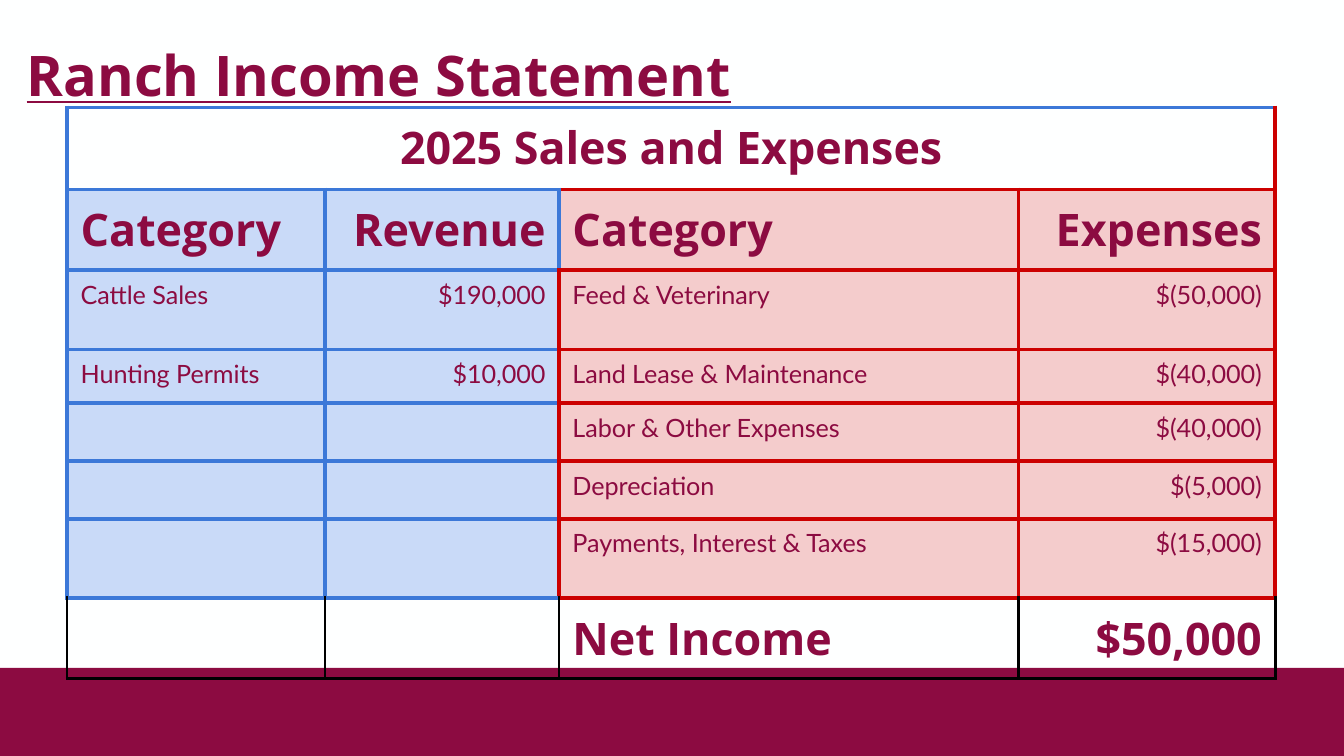
from lxml import etree
from pptx import Presentation
from pptx.dml.color import RGBColor
from pptx.enum.shapes import MSO_SHAPE
from pptx.enum.text import PP_ALIGN
from pptx.oxml import parse_xml
from pptx.oxml.ns import nsdecls, qn
from pptx.util import Inches, Pt

MAROON = RGBColor(0x8C, 0x0B, 0x41)
PAPER = RGBColor(0xFE, 0xFF, 0xFF)
BLUE = RGBColor(0x3C, 0x78, 0xD8)
PALE_BLUE = RGBColor(0xC9, 0xDA, 0xF8)
RED = RGBColor(0xCC, 0x00, 0x00)
PALE_RED = RGBColor(0xF4, 0xCC, 0xCC)
BLACK = RGBColor(0, 0, 0)

TITLE = "Ranch Income Statement"
ROWS = [
    ("2025 Sales and Expenses", "", "", ""),
    ("Category", "Revenue", "Category", "Expenses"),
    ("Cattle Sales", "$190,000", "Feed & Veterinary", "$(50,000)"),
    ("Hunting Permits", "$10,000", "Land Lease & Maintenance", "$(40,000)"),
    ("", "", "Labor & Other Expenses", "$(40,000)"),
    ("", "", "Depreciation", "$(5,000)"),
    ("", "", "Payments, Interest & Taxes", "$(15,000)"),
    ("", "", "Net Income", "$50,000"),
]
COLUMN_WIDTHS = [1.92, 1.74, 3.42, 1.91]
ROW_HEIGHTS = [0.61, 0.6, 0.59, 0.4, 0.43, 0.43, 0.59, 0.6]
LAST = len(ROWS) - 1

HEADING = dict(name="Open Sans", size=Pt(24), bold=True)
BODY = dict(name="Lato", size=Pt(13.5), bold=False)
TITLE_FORMAT = dict(name="Open Sans", size=Pt(30), bold=True, underline=True)


def set_font(font, formats):
    for name, value in formats.items():
        setattr(font, name, value)
    font.color.rgb = MAROON


def cell_edges(row, column):
    """Give the colour and width of the left, right, top and bottom border."""
    side = BLUE if column < 2 else RED
    if row == 0:
        return [(BLUE, 2.25), (RED, 2.25), (BLUE, 2.25), (side, 2.25)]
    if row == LAST:
        return [(BLACK, 1.5), (BLACK, 1.5), (side, 2.25), (BLACK, 1.5)]
    middle = BLUE if row == 1 else RED
    left = middle if column == 2 else side
    right = middle if column == 1 else side
    return [(left, 2.25), (right, 2.25), (side, 2.25), (side, 2.25)]


def set_borders(cell, edges):
    properties = cell._tc.get_or_add_tcPr()
    for index, (tag, (color, width)) in enumerate(zip(("lnL", "lnR", "lnT", "lnB"), edges)):
        properties.insert(index, parse_xml(
            f'<a:{tag} {nsdecls("a")} w="{Pt(width)}"><a:solidFill>'
            f'<a:srgbClr val="{color}"/></a:solidFill></a:{tag}>'))


def fill_cell(cell, row, column):
    if row == 0:
        fill = PAPER
    elif row < LAST:
        fill = PALE_BLUE if column < 2 else PALE_RED
    else:
        fill = None
    if fill is None:
        cell.fill.background()
    else:
        cell.fill.solid()
        cell.fill.fore_color.rgb = fill
    cell.margin_left = cell.margin_right = Inches(0.1)
    cell.margin_top = cell.margin_bottom = Inches(0.07)
    para = cell.text_frame.paragraphs[0]
    if row == 0:
        para.alignment = PP_ALIGN.CENTER
    elif column % 2:
        para.alignment = PP_ALIGN.RIGHT
    formats = HEADING if row in (0, 1, LAST) else BODY
    text = ROWS[row][column]
    if text:
        span = para.add_run()
        span.text = text
        set_font(span.font, formats)
    else:
        end = etree.SubElement(para._p, qn("a:endParaRPr"))
        end.set("sz", str(int(BODY["size"].pt * 100)))
    set_borders(cell, cell_edges(row, column))


deck = Presentation()
deck.slide_width, deck.slide_height = Inches(10), Inches(5.625)
page = deck.slides.add_slide(deck.slide_layouts[6])
page.background.fill.solid()
page.background.fill.fore_color.rgb = PAPER

band = page.shapes.add_shape(MSO_SHAPE.RECTANGLE, 0, Inches(4.97), Inches(10), Inches(0.66))
band.shadow.inherit = False
band.fill.solid()
band.fill.fore_color.rgb = MAROON
band.line.fill.background()

box = page.shapes.add_textbox(0, 0, Inches(10), Inches(0.75))
frame = box.text_frame
frame.word_wrap = True
for side in ("left", "right", "top", "bottom"):
    setattr(frame, f"margin_{side}", Inches(0.1))
para = frame.paragraphs[0]
para.line_spacing = 1.4
para._p.get_or_add_pPr().set("marL", str(Inches(0.1)))
span = para.add_run()
span.text = TITLE
set_font(span.font, TITLE_FORMAT)
span.font._element.find(qn("a:solidFill")).addnext(parse_xml(
    f'<a:effectLst {nsdecls("a")}><a:outerShdw blurRad="57150" dist="38100" dir="5400000">'
    '<a:srgbClr val="000000"><a:alpha val="50000"/></a:srgbClr></a:outerShdw></a:effectLst>'))

table = page.shapes.add_table(
    len(ROWS), len(COLUMN_WIDTHS), Inches(0.5), Inches(0.8),
    Inches(sum(COLUMN_WIDTHS)), Inches(sum(ROW_HEIGHTS))).table
table.first_row = table.horz_banding = False
for column, width in zip(table.columns, COLUMN_WIDTHS):
    column.width = Inches(width)
for row, height in zip(table.rows, ROW_HEIGHTS):
    row.height = Inches(height)
table.cell(0, 0).merge(table.cell(0, len(COLUMN_WIDTHS) - 1))
for row in range(len(ROWS)):
    for column in range(len(COLUMN_WIDTHS)):
        fill_cell(table.cell(row, column), row, column)

deck.save("out.pptx")
